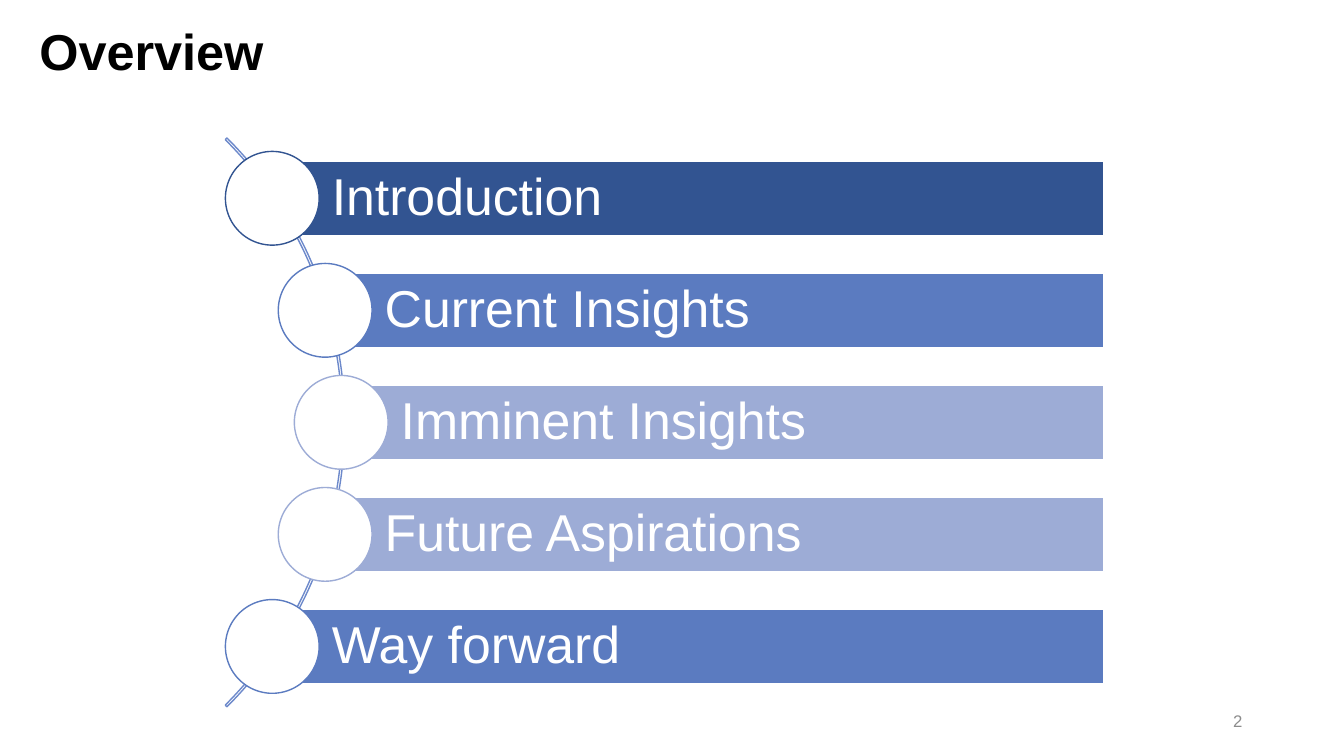
import math

from pptx import Presentation
from pptx.dml.color import RGBColor
from pptx.enum.shapes import MSO_SHAPE
from pptx.enum.text import MSO_ANCHOR, PP_ALIGN
from pptx.util import Inches, Pt

RECTANGLE = MSO_SHAPE.RECTANGLE
OVAL = MSO_SHAPE.OVAL
BLOCK_ARC = MSO_SHAPE.BLOCK_ARC
MIDDLE = MSO_ANCHOR.MIDDLE
LEFT = PP_ALIGN.LEFT
RIGHT = PP_ALIGN.RIGHT

SLIDE_WIDTH = Inches(13.33)
SLIDE_HEIGHT = Inches(7.5)
UNIT = SLIDE_HEIGHT / 100
FONT = "Arial"
COLORS = {
    "white": "FFFFFF",
    "black": "000000",
    "gray": "8C8C8C",
    "arc": "6D89CB",
    "navy": "325491",
    "blue": "5B7BC0",
    "pale": "9DACD6",
}

AGENDA = [
    ("Introduction", "navy"),
    ("Current Insights", "blue"),
    ("Imminent Insights", "pale"),
    ("Future Aspirations", "pale"),
    ("Way forward", "blue"),
]
ARC_X, ARC_Y = -7.6, 55.87
ARC_RADIUS = 53.2
NODE_RADIUS = 52.73
ROW_PITCH = 14.82
BAR_RIGHT = 146
BAR_HEIGHT = 9.87
NODE_SIZE = 12.4


def grid(*shares):
    return [round(share * UNIT) for share in shares]


def color(name):
    return RGBColor.from_string(COLORS[name])


def write(text_frame, text, size, color_name, alignment=LEFT, bold=False, line_spacing=1.0):
    text_frame.text = text
    text_frame.word_wrap = True
    text_frame.vertical_anchor = MIDDLE
    paragraph = text_frame.paragraphs[0]
    paragraph.alignment = alignment
    paragraph.line_spacing = line_spacing
    font = paragraph.runs[0].font
    font.name = FONT
    font.size = Pt(size)
    font.bold = bold
    font.color.rgb = color(color_name)


def add_outlined(slide, kind, box, fill, line):
    shape = slide.shapes.add_shape(kind, *grid(*box))
    shape.shadow.inherit = False
    if fill:
        shape.fill.solid()
        shape.fill.fore_color.rgb = color(fill)
    else:
        shape.fill.background()
    shape.line.color.rgb = color(line)
    shape.line.width = Pt(1)
    return shape


def add_title(slide, text):
    title = slide.shapes.title
    title.left, title.top, title.width, title.height = grid(3.87, 2.13, 86.53, 10)
    write(title.text_frame, text, 36, "black", bold=True, line_spacing=0.9)


def add_page_number(slide, text):
    box = slide.shapes.add_textbox(*grid(125.6, 92.67, 40, 5.33))
    write(box.text_frame, text, 12, "gray", alignment=RIGHT)


def add_arc(slide):
    box = (ARC_X - ARC_RADIUS, ARC_Y - ARC_RADIUS, 2 * ARC_RADIUS, 2 * ARC_RADIUS)
    arc = add_outlined(slide, BLOCK_ARC, box, None, "arc")
    for index, value in enumerate((189, 27, 0.003)):
        arc.adjustments[index] = value


def add_agenda_row(slide, offset, text, color_name):
    node_x = ARC_X + math.sqrt(NODE_RADIUS**2 - offset**2)
    node_y = ARC_Y + offset
    bar_box = (node_x, node_y - BAR_HEIGHT / 2, BAR_RIGHT - node_x, BAR_HEIGHT)
    bar = add_outlined(slide, RECTANGLE, bar_box, color_name, "white")
    frame = bar.text_frame
    frame.margin_left = Inches(0.59)
    frame.margin_right = frame.margin_top = frame.margin_bottom = Inches(0.1)
    write(frame, text, 37, "white", line_spacing=0.9)
    node_box = (node_x - NODE_SIZE / 2, node_y - NODE_SIZE / 2, NODE_SIZE, NODE_SIZE)
    add_outlined(slide, OVAL, node_box, "white", color_name)


def main():
    presentation = Presentation()
    presentation.slide_width = SLIDE_WIDTH
    presentation.slide_height = SLIDE_HEIGHT
    slide = presentation.slides.add_slide(presentation.slide_layouts[5])
    add_title(slide, "Overview")
    add_page_number(slide, "2")
    add_arc(slide)
    middle = len(AGENDA) // 2
    for row, (text, color_name) in enumerate(AGENDA):
        add_agenda_row(slide, (row - middle) * ROW_PITCH, text, color_name)
    presentation.save("out.pptx")


if __name__ == "__main__":
    main()
